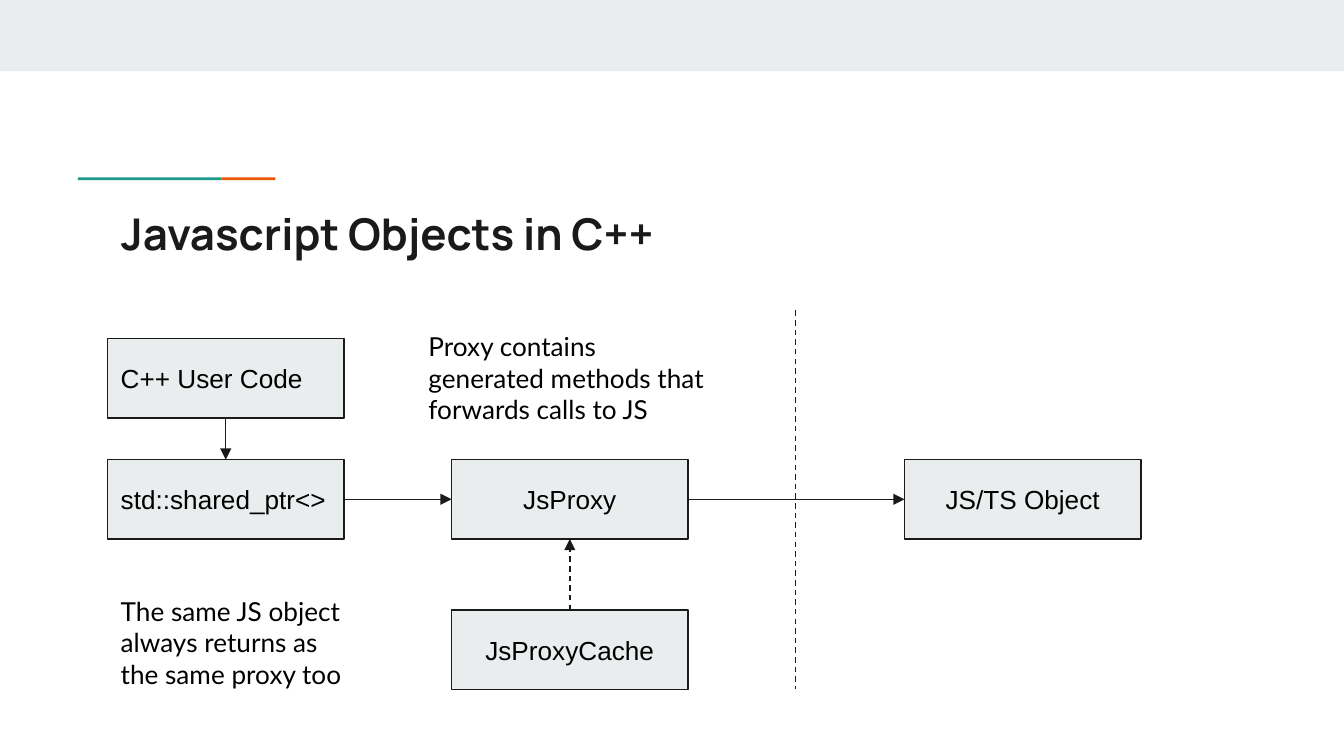
from lxml import etree
from pptx import Presentation
from pptx.dml.color import RGBColor
from pptx.enum.dml import MSO_LINE
from pptx.enum.shapes import MSO_CONNECTOR, MSO_SHAPE
from pptx.enum.text import MSO_ANCHOR, MSO_AUTO_SIZE, PP_ALIGN
from pptx.oxml.ns import qn
from pptx.util import Inches, Pt

INK = RGBColor(0x1A, 0x1A, 0x1A)
BLACK = RGBColor(0x00, 0x00, 0x00)
PALE = RGBColor(0xE9, 0xED, 0xEE)
TEAL = RGBColor(0x1A, 0x99, 0x88)
ORANGE = RGBColor(0xEB, 0x56, 0x00)
RECTANGLE = MSO_SHAPE.RECTANGLE
STRAIGHT = MSO_CONNECTOR.STRAIGHT
DASH = MSO_LINE.DASH
TOP, MIDDLE = MSO_ANCHOR.TOP, MSO_ANCHOR.MIDDLE
LEFT, CENTER = PP_ALIGN.LEFT, PP_ALIGN.CENTER
NO_FIT, GROW = MSO_AUTO_SIZE.NONE, MSO_AUTO_SIZE.SHAPE_TO_FIT_TEXT
SITE = {"top": 0, "left": 1, "bottom": 2, "right": 3}

SLIDE_WIDTH = 10
SLIDE_HEIGHT = SLIDE_WIDTH * 9 / 16
TITLE = "Javascript Objects in C++"
BANDS = [
    ((0, 0, SLIDE_WIDTH, 0.53), PALE),
    ((0.58, 1.32, 1.07, 0.02), TEAL),
    ((1.65, 1.32, 0.4, 0.02), ORANGE),
]
COLUMNS = {"code": 0.8, "proxy": 3.36, "script": 6.73}
ROWS = {"user": 2.52, "object": 3.42, "cache": 4.54}
BOX_WIDTH, BOX_HEIGHT = 1.76, 0.59
BOXES = [
    ("C++ User Code", "code", "user", LEFT),
    ("std::shared_ptr<>", "code", "object", LEFT),
    ("JS/TS Object", "script", "object", CENTER),
    ("JsProxy", "proxy", "object", CENTER),
    ("JsProxyCache", "proxy", "cache", CENTER),
]
ARROWS = [
    ("C++ User Code", "bottom", "std::shared_ptr<>", "top", None),
    ("std::shared_ptr<>", "right", "JsProxy", "left", None),
    ("JsProxy", "right", "JS/TS Object", "left", None),
    ("JsProxyCache", "top", "JsProxy", "bottom", DASH),
]
NOTES = [
    ("The same JS object always returns as the same proxy too", (0.8, 4.33, 1.87, 0.91)),
    ("Proxy contains generated methods that forwards calls to JS", (3.09, 2.36, 2.3, 0.91)),
]
DIVIDER = (5.92, 2.31, 5.92, 5.13)
BODY_FONT = {"name": "Arial", "size": Pt(14), "bold": False}
NOTE_FONT = {**BODY_FONT, "name": "Lato"}
TITLE_FONT = {"name": "Manrope", "size": Pt(23.4), "bold": True}


def inches(values):
    return [Inches(value) for value in values]


def set_values(target, values):
    for name, value in values.items():
        setattr(target, name, value)


def write_text(shape, text, font, color, anchor=TOP, alignment=LEFT, fit=NO_FIT):
    frame = shape.text_frame
    frame.text = text
    set_values(frame, {"word_wrap": True, "auto_size": fit, "vertical_anchor": anchor})
    for side in ("left", "top", "right", "bottom"):
        setattr(frame, f"margin_{side}", Inches(0.1))
    paragraph = frame.paragraphs[0]
    paragraph.alignment = alignment
    set_values(paragraph.runs[0].font, font)
    paragraph.runs[0].font.color.rgb = color


def add_rectangle(slide, bounds, fill):
    shape = slide.shapes.add_shape(RECTANGLE, *inches(bounds))
    shape.shadow.inherit = False
    shape.fill.solid()
    shape.fill.fore_color.rgb = fill
    shape.line.fill.background()
    return shape


def style_line(shape, dash=None):
    shape.line.color.rgb = INK
    shape.line.width = Pt(0.75)
    shape.line.dash_style = dash


def add_line(slide, points, dash=None):
    connector = slide.shapes.add_connector(STRAIGHT, *inches(points))
    style_line(connector, dash)
    etree.SubElement(connector._element.spPr, qn("a:effectLst"))
    return connector


def main():
    presentation = Presentation()
    presentation.slide_width, presentation.slide_height = inches((SLIDE_WIDTH, SLIDE_HEIGHT))
    slide = presentation.slides.add_slide(presentation.slide_layouts[5])

    title = slide.shapes.title
    bounds = inches((0.8, 1.44, 8.41, 0.59))
    set_values(title, dict(zip(("left", "top", "width", "height"), bounds)))
    write_text(title, TITLE, TITLE_FONT, INK)

    for bounds, fill in BANDS:
        add_rectangle(slide, bounds, fill)

    boxes = {}
    for text, column, row, alignment in BOXES:
        box = add_rectangle(slide, (COLUMNS[column], ROWS[row], BOX_WIDTH, BOX_HEIGHT), PALE)
        style_line(box)
        write_text(box, text, BODY_FONT, BLACK, MIDDLE, alignment)
        boxes[text] = box

    add_line(slide, DIVIDER, DASH)
    for source, source_side, target, target_side, dash in ARROWS:
        arrow = add_line(slide, (0, 0, 0, 0), dash)
        arrow.begin_connect(boxes[source], SITE[source_side])
        arrow.end_connect(boxes[target], SITE[target_side])
        etree.SubElement(arrow.line._get_or_add_ln(), qn("a:tailEnd"), type="triangle")

    for text, bounds in NOTES:
        note = slide.shapes.add_textbox(*inches(bounds))
        write_text(note, text, NOTE_FONT, BLACK, fit=GROW)

    presentation.save("out.pptx")


if __name__ == "__main__":
    main()
